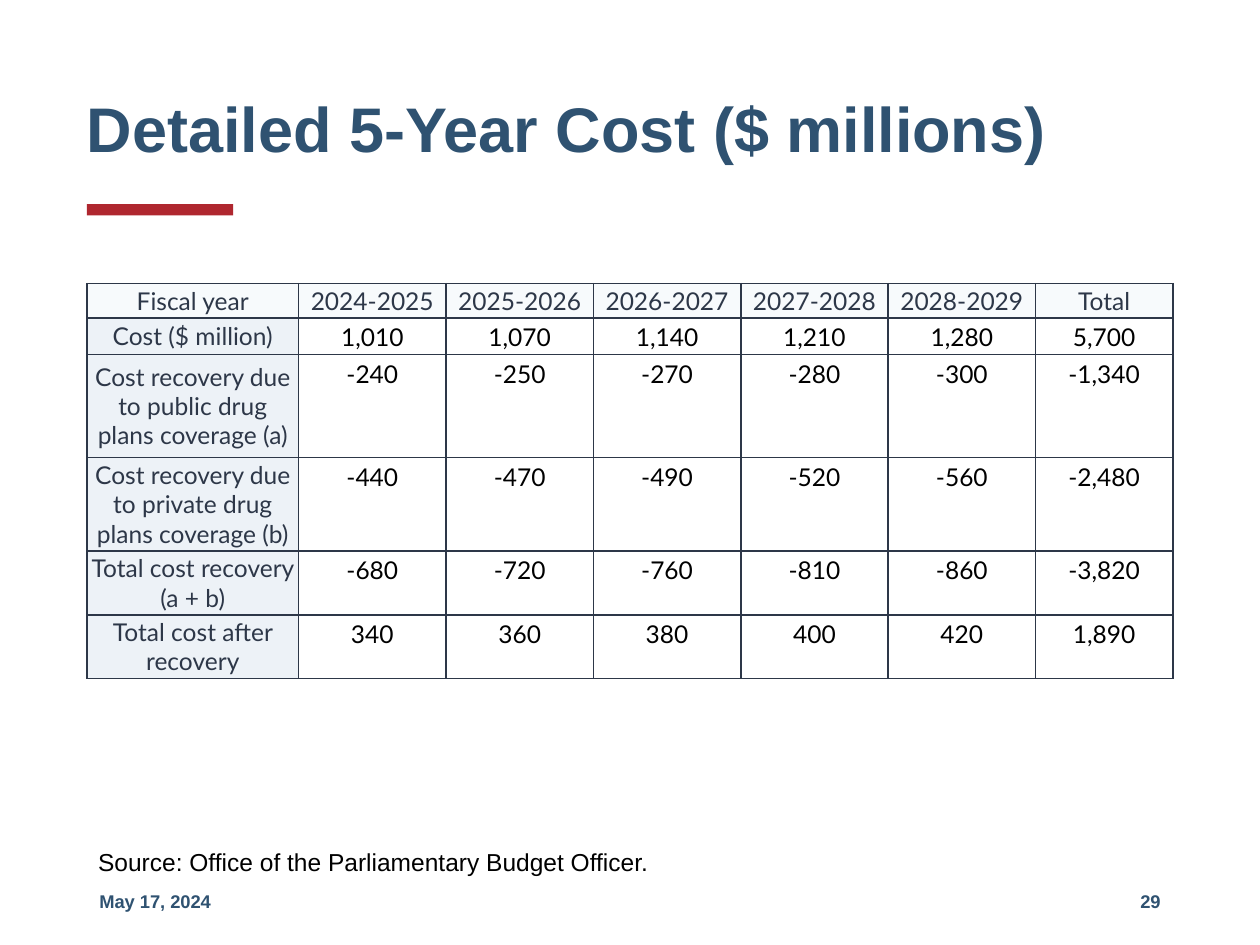
from dataclasses import dataclass

from lxml.etree import SubElement
from pptx import Presentation
from pptx.dml.color import RGBColor
from pptx.enum.shapes import MSO_SHAPE
from pptx.enum.text import MSO_ANCHOR, PP_ALIGN
from pptx.oxml.ns import qn
from pptx.util import Inches, Pt


@dataclass(frozen=True)
class Theme:
    navy: str = "2F5271"
    red: str = "AF272F"
    slate: str = "2D3748"
    black: str = "000000"
    white: str = "FFFFFF"
    header_fill: str = "F7FAFC"
    label_fill: str = "EDF2F7"
    text_font: str = "Arial"
    table_font: str = "Lato"
    title_size: float = 36
    body_size: float = 14
    footer_size: float = 10.5


@dataclass(frozen=True)
class Label:
    text: str
    left: float
    top: float
    width: float
    height: float
    size: float
    color: str
    bold: bool = True
    align: PP_ALIGN = PP_ALIGN.LEFT
    anchor: MSO_ANCHOR = MSO_ANCHOR.MIDDLE
    side_inset: float = 0.1
    line_spacing: float = 1.0


THEME = Theme()
MARGIN = 0.69
CELL_INSET = Inches(0.02)

LABELS = [
    Label("Detailed 5-Year Cost ($ millions)", MARGIN, 0.4, 8.62, 1.3,
          THEME.title_size, THEME.navy, side_inset=0, line_spacing=0.9),
    Label("May 17, 2024", MARGIN, 6.95, 2.25, 0.4, THEME.footer_size, THEME.navy),
    Label("29", 7.06, 6.95, 2.25, 0.4, THEME.footer_size, THEME.navy,
          align=PP_ALIGN.RIGHT),
    Label("Source: Office of the Parliamentary Budget Officer.", 0.68, 6.7, 8.62, 0.4,
          THEME.body_size, THEME.black, bold=False, anchor=MSO_ANCHOR.TOP,
          line_spacing=0.9),
]

COST_ROWS = [
    ("Fiscal year", "2024-2025", "2025-2026", "2026-2027", "2027-2028",
     "2028-2029", "Total"),
    ("Cost ($ million)", "1,010", "1,070", "1,140", "1,210", "1,280", "5,700"),
    ("Cost recovery due to public drug plans coverage (a)",
     "-240", "-250", "-270", "-280", "-300", "-1,340"),
    ("Cost recovery due to private drug plans coverage (b)",
     "-440", "-470", "-490", "-520", "-560", "-2,480"),
    ("Total cost recovery (a + b)",
     "-680", "-720", "-760", "-810", "-860", "-3,820"),
    ("Total cost after recovery", "340", "360", "380", "400", "420", "1,890"),
]
COLUMN_WIDTHS = [1.68] + [1.17] * 5 + [1.09]
ROW_HEIGHTS = [0.23, 0.23, 0.82, 0.63, 0.43, 0.43]


def style_font(font, name: str, size: float, color: str, bold: bool = False) -> None:
    font.name = name
    font.size = Pt(size)
    font.bold = bold
    font.color.rgb = RGBColor.from_string(color)


def add_label(slide, label: Label) -> None:
    box = slide.shapes.add_textbox(Inches(label.left), Inches(label.top),
                                   Inches(label.width), Inches(label.height))
    frame = box.text_frame
    frame.word_wrap = True
    frame.vertical_anchor = label.anchor
    frame.margin_left = frame.margin_right = Inches(label.side_inset)
    frame.text = label.text
    paragraph = frame.paragraphs[0]
    paragraph.alignment = label.align
    paragraph.line_spacing = label.line_spacing
    style_font(paragraph.runs[0].font, THEME.text_font, label.size, label.color,
               label.bold)


def add_accent_bar(slide) -> None:
    bar = slide.shapes.add_shape(MSO_SHAPE.RECTANGLE, Inches(MARGIN), Inches(1.62),
                                 Inches(1.16), Inches(0.09))
    bar.shadow.inherit = False
    bar.fill.solid()
    bar.fill.fore_color.rgb = RGBColor.from_string(THEME.red)
    bar.line.fill.background()


def set_borders(cell, color: str, width: float) -> None:
    properties = cell._tc.get_or_add_tcPr()
    for position, side in enumerate(("a:lnL", "a:lnR", "a:lnT", "a:lnB")):
        line = SubElement(properties, qn(side), w=str(Pt(width)))
        fill = SubElement(line, qn("a:solidFill"))
        SubElement(fill, qn("a:srgbClr"), val=color)
        # Borders come before the cell fill in the schema
        properties.insert(position, line)


def fill_cell(cell, text: str, row: int, column: int) -> None:
    is_header, is_label = row == 0, column == 0
    is_value = not (is_header or is_label)
    cell.margin_left = cell.margin_right = CELL_INSET
    cell.margin_top = cell.margin_bottom = CELL_INSET
    is_middle = is_label or (is_header and column == len(COLUMN_WIDTHS) - 1)
    cell.vertical_anchor = MSO_ANCHOR.MIDDLE if is_middle else MSO_ANCHOR.TOP

    cell.text_frame.text = text
    paragraph = cell.text_frame.paragraphs[0]
    paragraph.alignment = PP_ALIGN.CENTER
    if is_value:
        paragraph.line_spacing = 1.07
        paragraph.space_after = Pt(8)
    style_font(paragraph.runs[0].font, THEME.table_font, THEME.body_size,
               THEME.black if is_value else THEME.slate)

    if is_value:
        cell.fill.background()
    else:
        cell.fill.solid()
        color = THEME.header_fill if is_header else THEME.label_fill
        cell.fill.fore_color.rgb = RGBColor.from_string(color)
    set_borders(cell, THEME.slate, 1)


def add_cost_table(slide) -> None:
    table = slide.shapes.add_table(
        len(ROW_HEIGHTS), len(COLUMN_WIDTHS), Inches(MARGIN), Inches(2.25),
        Inches(sum(COLUMN_WIDTHS)), Inches(sum(ROW_HEIGHTS))).table
    table.first_row = table.horz_banding = False
    for column, width in zip(table.columns, COLUMN_WIDTHS):
        column.width = Inches(width)
    for row, height in zip(table.rows, ROW_HEIGHTS):
        row.height = Inches(height)
    for row_index, texts in enumerate(COST_ROWS):
        for column_index, text in enumerate(texts):
            fill_cell(table.cell(row_index, column_index), text,
                      row_index, column_index)


def main() -> None:
    presentation = Presentation()
    presentation.slide_width = Inches(10)
    presentation.slide_height = Inches(7.5)
    slide = presentation.slides.add_slide(presentation.slide_layouts[6])
    slide.background.fill.solid()
    slide.background.fill.fore_color.rgb = RGBColor.from_string(THEME.white)

    # Accent bar, title, footer and source line
    add_accent_bar(slide)
    for label in LABELS:
        add_label(slide, label)

    # Cost table
    add_cost_table(slide)

    presentation.save("out.pptx")


if __name__ == "__main__":
    main()
